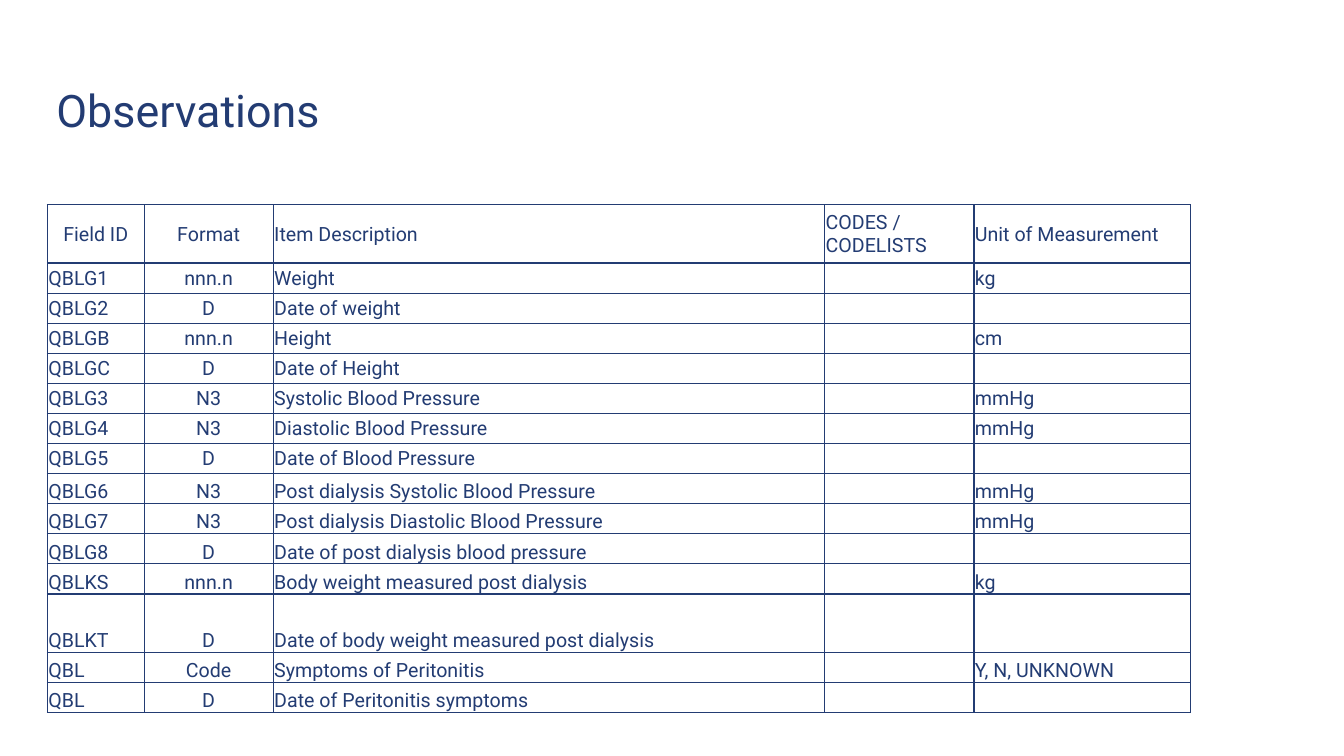
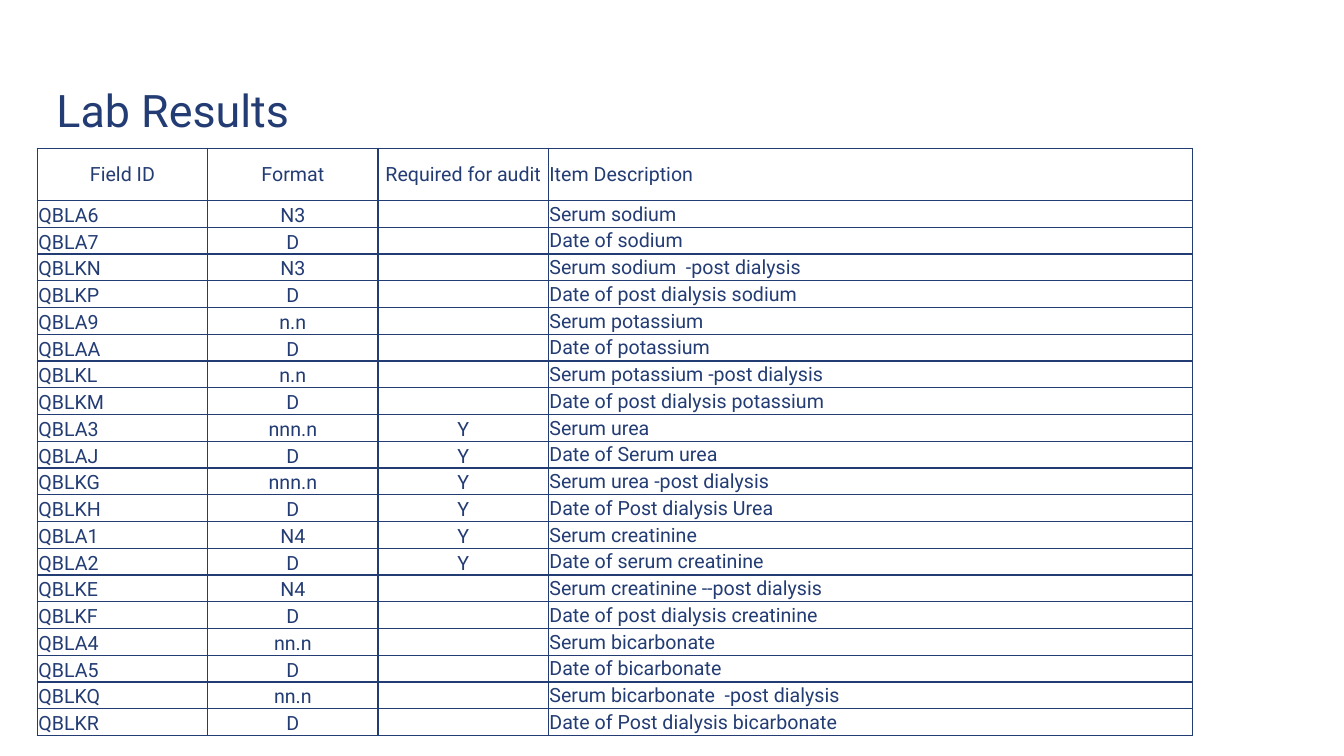
"""Builds two slides listing the dialysis observation and lab result fields."""
from dataclasses import dataclass

from lxml import etree
from pptx import Presentation
from pptx.dml.color import RGBColor
from pptx.enum.text import MSO_ANCHOR, PP_ALIGN
from pptx.oxml.ns import qn
from pptx.slide import Slide
from pptx.table import _Cell
from pptx.text.text import _Paragraph
from pptx.util import Inches, Pt

MIDDLE, BOTTOM = MSO_ANCHOR.MIDDLE, MSO_ANCHOR.BOTTOM
LEFT, CENTER = PP_ALIGN.LEFT, PP_ALIGN.CENTER
NAVY = "233C73"
FONT = "Roboto"
TITLE_SIZE, CELL_SIZE = 32, 14
BORDER_WIDTH = 1
CELL_MARGIN = 0.01


@dataclass(frozen=True)
class FieldTable:
    """A titled field list with its grid and alignment rules."""
    title: str
    left: float
    top: float
    height: float
    columns: tuple[float, ...]
    tall_rows: tuple[int, ...]
    tall_height: float
    centered: tuple[int, ...]
    bottom_columns: tuple[int, ...]
    bottom_start: int
    rows: tuple[tuple[str, ...], ...]

    def row_height(self, row: int) -> float:
        """Return the tall height or an equal share of the remaining height."""
        if row in self.tall_rows:
            return self.tall_height
        tall_count = len(self.tall_rows)
        return (self.height - tall_count * self.tall_height) / (len(self.rows) - tall_count)

    def alignment(self, row: int, column: int) -> PP_ALIGN:
        """Return the alignment of a cell; the first heading is centred."""
        return CENTER if column in self.centered or row == column == 0 else LEFT

    def anchor(self, row: int, column: int) -> MSO_ANCHOR:
        """Return the vertical anchor of a cell."""
        at_bottom = row >= self.bottom_start and column in self.bottom_columns
        return BOTTOM if at_bottom else MIDDLE


OBSERVATIONS = FieldTable(
    title="Observations", left=0.47, top=2.03, height=5.04,
    columns=(0.96, 1.28, 5.47, 1.48, 2.15),
    tall_rows=(0, 12), tall_height=0.58,
    centered=(1,), bottom_columns=(0, 1, 2, 3, 4), bottom_start=8,
    rows=(
        ("Field ID", "Format", "Item Description", "CODES / CODELISTS", "Unit of Measurement"),
        ("QBLG1", "nnn.n", "Weight", "", "kg"),
        ("QBLG2", "D", "Date of weight", "", ""),
        ("QBLGB", "nnn.n", "Height", "", "cm"),
        ("QBLGC", "D", "Date of Height", "", ""),
        ("QBLG3", "N3", "Systolic Blood Pressure", "", "mmHg"),
        ("QBLG4", "N3", "Diastolic Blood Pressure", "", "mmHg"),
        ("QBLG5", "D", "Date of Blood Pressure", "", ""),
        ("QBLG6", "N3", "Post dialysis Systolic Blood Pressure", "", "mmHg"),
        ("QBLG7", "N3", "Post dialysis Diastolic Blood Pressure", "", "mmHg"),
        ("QBLG8", "D", "Date of post dialysis blood pressure", "", ""),
        ("QBLKS", "nnn.n", "Body weight measured post dialysis", "", "kg"),
        ("QBLKT", "D", "Date of body weight measured post dialysis", "", ""),
        ("QBL", "Code", "Symptoms of Peritonitis", "", "Y, N, UNKNOWN"),
        ("QBL", "D", "Date of Peritonitis symptoms", "", ""),
    ),
)

LAB_RESULTS = FieldTable(
    title="Lab Results", left=0.37, top=1.47, height=5.83,
    columns=(1.69, 1.69, 1.69, 6.39),
    tall_rows=(0,), tall_height=0.52,
    centered=(1, 2), bottom_columns=(0, 1, 2), bottom_start=1,
    rows=(
        ("Field ID", "Format", "Required for audit", "Item Description"),
        ("QBLA6", "N3", "", "Serum sodium"),
        ("QBLA7", "D", "", "Date of sodium"),
        ("QBLKN", "N3", "", "Serum sodium  -post dialysis"),
        ("QBLKP", "D", "", "Date of post dialysis sodium"),
        ("QBLA9", "n.n", "", "Serum potassium"),
        ("QBLAA", "D", "", "Date of potassium"),
        ("QBLKL", "n.n", "", "Serum potassium -post dialysis"),
        ("QBLKM", "D", "", "Date of post dialysis potassium"),
        ("QBLA3", "nnn.n", "Y", "Serum urea"),
        ("QBLAJ", "D", "Y", "Date of Serum urea"),
        ("QBLKG", "nnn.n", "Y", "Serum urea -post dialysis"),
        ("QBLKH", "D", "Y", "Date of Post dialysis Urea"),
        ("QBLA1", "N4", "Y", "Serum creatinine"),
        ("QBLA2", "D", "Y", "Date of serum creatinine"),
        ("QBLKE", "N4", "", "Serum creatinine --post dialysis"),
        ("QBLKF", "D", "", "Date of post dialysis creatinine"),
        ("QBLA4", "nn.n", "", "Serum bicarbonate"),
        ("QBLA5", "D", "", "Date of bicarbonate"),
        ("QBLKQ", "nn.n", "", "Serum bicarbonate  -post dialysis"),
        ("QBLKR", "D", "", "Date of Post dialysis bicarbonate"),
    ),
)


def color(value: str) -> RGBColor:
    """Turn a hex string into a colour."""
    return RGBColor.from_string(value)


def style_paragraph(para: _Paragraph, size: int) -> None:
    """Apply the shared font and colour at the given size."""
    para.font.name = FONT
    para.font.size = Pt(size)
    para.font.color.rgb = color(NAVY)


def add_title(page: Slide, text: str) -> None:
    """Add the slide title."""
    box = page.shapes.add_textbox(Inches(0.56), Inches(0.4), Inches(10.43), Inches(1.38))
    frame = box.text_frame
    frame.word_wrap = True
    frame.vertical_anchor = MIDDLE
    frame.margin_left = frame.margin_right = frame.margin_top = frame.margin_bottom = 0
    para = frame.paragraphs[0]
    para.text = text
    style_paragraph(para, TITLE_SIZE)


def add_borders(cell: _Cell) -> None:
    """Draw a thin line on all four sides of a cell."""
    properties = cell._tc.get_or_add_tcPr()
    for side in ("a:lnL", "a:lnR", "a:lnT", "a:lnB"):
        line = etree.SubElement(properties, qn(side), w=str(Pt(BORDER_WIDTH)))
        fill = etree.SubElement(line, qn("a:solidFill"))
        etree.SubElement(fill, qn("a:srgbClr"), val=NAVY)


def fill_cell(cell: _Cell, text: str, alignment: PP_ALIGN, anchor: MSO_ANCHOR) -> None:
    """Write and style one table cell."""
    add_borders(cell)
    cell.fill.background()
    cell.margin_left = cell.margin_right = cell.margin_top = Inches(CELL_MARGIN)
    cell.margin_bottom = 0
    cell.vertical_anchor = anchor
    para = cell.text_frame.paragraphs[0]
    para.text = text
    para.alignment = alignment
    style_paragraph(para, CELL_SIZE)
    if not text:
        etree.SubElement(para._p, qn("a:endParaRPr"), sz=str(CELL_SIZE * 100))


def add_field_table(page: Slide, fields: FieldTable) -> None:
    """Add the field list as a table."""
    frame = page.shapes.add_table(
        len(fields.rows), len(fields.columns), Inches(fields.left), Inches(fields.top),
        Inches(sum(fields.columns)), Inches(fields.height))
    table = frame.table
    table.first_row = table.horz_banding = False
    for column, width in enumerate(fields.columns):
        table.columns[column].width = Inches(width)
    for row, texts in enumerate(fields.rows):
        table.rows[row].height = Inches(fields.row_height(row))
        for column, text in enumerate(texts):
            fill_cell(table.cell(row, column), text,
                      fields.alignment(row, column), fields.anchor(row, column))


def main() -> None:
    """Build and save the deck."""
    deck = Presentation()
    deck.slide_width, deck.slide_height = Inches(13.33), Inches(7.5)
    blank = deck.slide_layouts[6]
    for fields in (OBSERVATIONS, LAB_RESULTS):
        page = deck.slides.add_slide(blank)
        add_title(page, fields.title)
        add_field_table(page, fields)
    deck.save("out.pptx")


if __name__ == "__main__":
    main()
